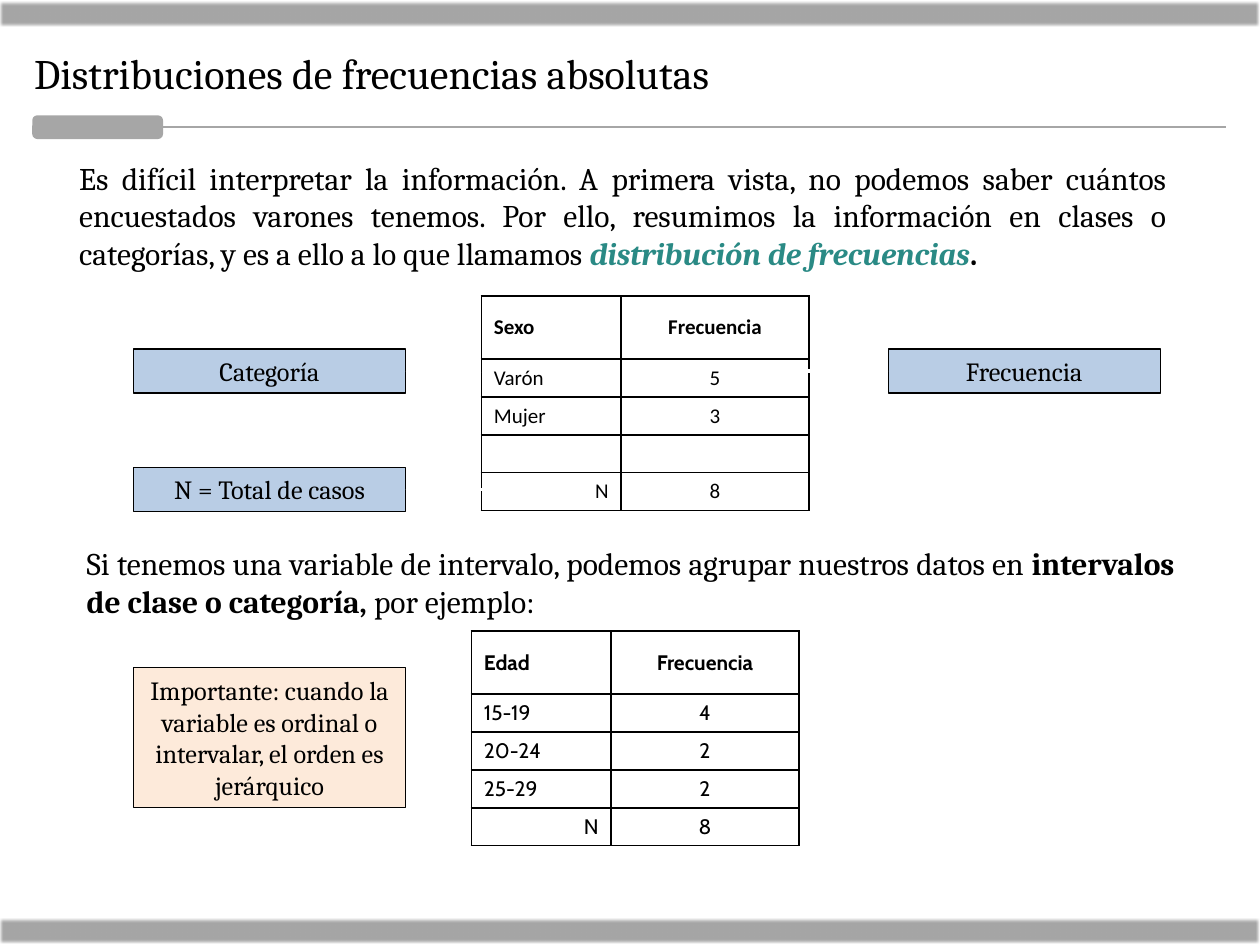
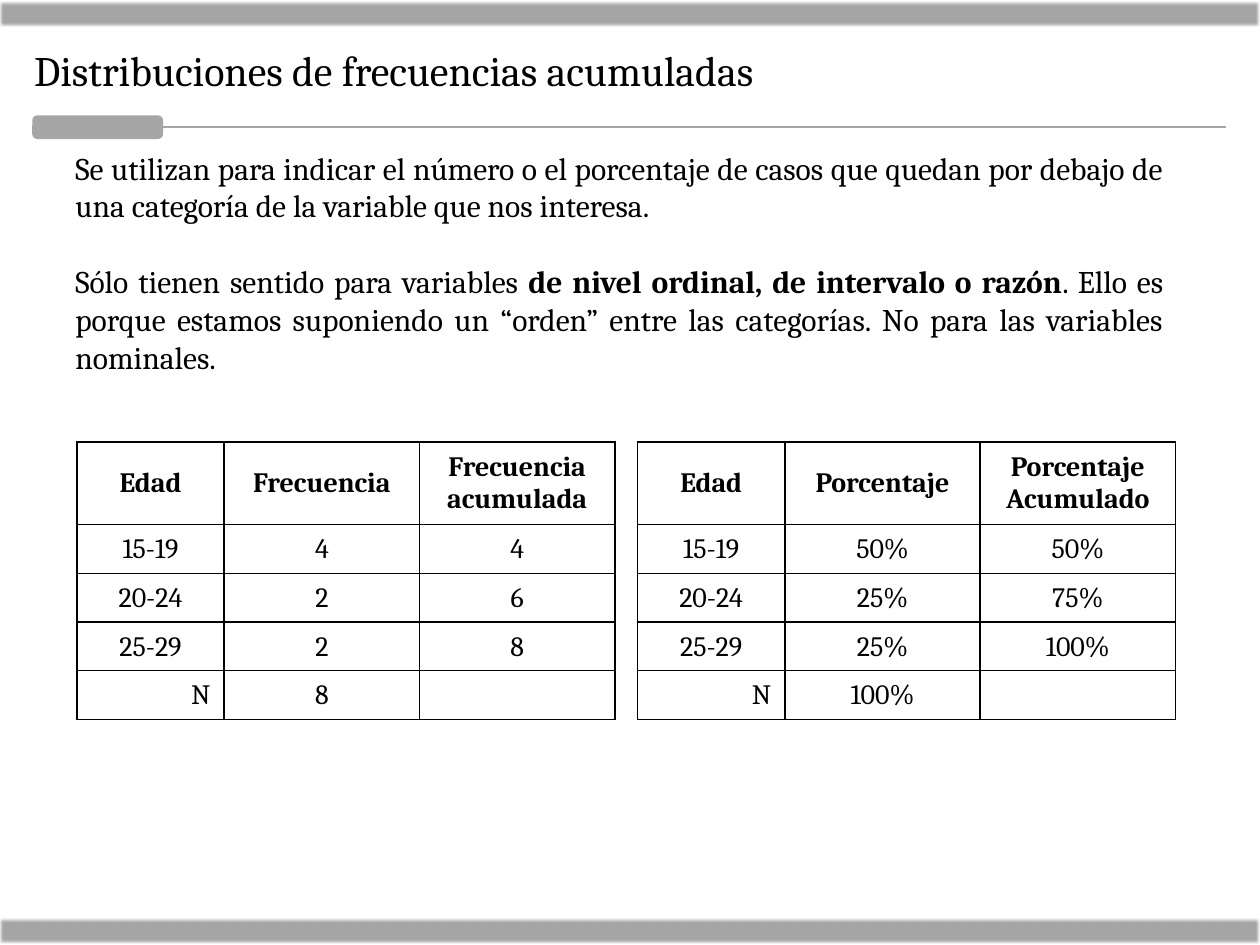
from lxml.etree import SubElement
from pptx import Presentation
from pptx.dml.color import RGBColor
from pptx.enum.shapes import MSO_CONNECTOR, MSO_SHAPE
from pptx.enum.text import MSO_ANCHOR, MSO_AUTO_SIZE, PP_ALIGN
from pptx.oxml.ns import qn
from pptx.util import Inches, Pt

INK = {"black": "000000", "white": "FFFFFF", "gray": "A6A6A6",
       "blue": "B9CDE5", "peach": "FDEADA", "teal": "2A8A85"}
SERIF = "Cambria"
LEFT, MID, RIGHT, FULL = (PP_ALIGN.LEFT, PP_ALIGN.CENTER,
                          PP_ALIGN.RIGHT, PP_ALIGN.JUSTIFY)
BOLD = {"bold": True}


def rgb(name):
    return RGBColor.from_string(INK[name])


def write(frame, *paras, size=18, font=SERIF, color="black", bold=False,
          align=LEFT, before=0, gap=0):
    """Each paragraph is a string or a list of (text, format) runs."""
    frame.word_wrap = True
    for i, runs in enumerate(paras):
        para = frame.add_paragraph() if i else frame.paragraphs[0]
        para.alignment = align
        para.space_before = Pt(gap if i else before)
        for text, style in [(runs, {})] if isinstance(runs, str) else runs:
            if not text:
                SubElement(para._p, qn("a:endParaRPr"), sz=str(size * 100))
                continue
            run = para.add_run()
            run.text = text
            face = run.font
            face.name, face.size = font, Pt(size)
            face.bold = style.get("bold", bold)
            face.italic = style.get("italic", False)
            face.color.rgb = rgb(style.get("color", color))


def prose(slide, box, *paras, **style):
    frame = slide.shapes.add_textbox(*map(Inches, box)).text_frame
    write(frame, *paras, align=FULL, **style)
    frame.auto_size = MSO_AUTO_SIZE.SHAPE_TO_FIT_TEXT


def block(slide, box, fill, kind=MSO_SHAPE.RECTANGLE, line=None, width=0.75):
    shape = slide.shapes.add_shape(kind, *map(Inches, box))
    shape.shadow.inherit = False
    shape.fill.solid()
    shape.fill.fore_color.rgb = rgb(fill)
    if line:
        shape.line.color.rgb = rgb(line)
        shape.line.width = Pt(width)
    else:
        shape.line.fill.background()
    return shape


def label(slide, box, text, fill="blue"):
    shape = block(slide, box, fill, line="black")
    frame = shape.text_frame
    write(frame, text, size=15, align=MID, before=3)
    frame.vertical_anchor = MSO_ANCHOR.MIDDLE
    frame.auto_size = MSO_AUTO_SIZE.SHAPE_TO_FIT_TEXT
    return shape


def rule(slide, start, end, color, width):
    line = slide.shapes.add_connector(MSO_CONNECTOR.STRAIGHT,
                                      *map(Inches, start + end))
    line.line.color.rgb = rgb(color)
    line.line.width = Pt(width)
    SubElement(line._element.spPr, qn("a:effectLst"))
    return line


def arrow(slide, left, box, side):
    """Runs level from the given x to a side of the box."""
    mid = (box.top + box.height / 2) / Inches(1)
    line = rule(slide, (left, mid), (left, mid), "white", 2.25)
    line.end_connect(box, side)
    SubElement(line.line._get_or_add_ln(), qn("a:tailEnd"), type="arrow")


def border(cell):
    props = cell._tc.get_or_add_tcPr()
    for side in "LRTB":
        line = SubElement(props, qn("a:ln" + side), w=str(Pt(1)))
        fill = SubElement(line, qn("a:solidFill"))
        SubElement(fill, qn("a:srgbClr"), val=INK["black"])


def grid(slide, spot, cols, rows, data, pad, first=LEFT, **style):
    """Frequency table: bold head, first column aligned, total N at right."""
    size = (sum(cols), sum(rows))
    table = slide.shapes.add_table(len(rows), len(cols),
                                   *map(Inches, spot + size)).table
    table.first_row = table.horz_banding = False
    for col, width in zip(table.columns, cols):
        col.width = Inches(width)
    for r, (row, high) in enumerate(zip(data, rows)):
        table.rows[r].height = Inches(high)
        for c, text in enumerate(row):
            cell = table.cell(r, c)
            border(cell)
            cell.fill.background()
            cell.margin_left = cell.margin_right = Inches(pad[0])
            cell.margin_top = cell.margin_bottom = Inches(pad[1])
            cell.vertical_anchor = MSO_ANCHOR.BOTTOM if r else MSO_ANCHOR.MIDDLE
            align = MID if c else RIGHT if text == "N" else first
            write(cell.text_frame, text, bold=r == 0, align=align, **style)


def start(deck, title, top):
    """Adds a slide with its title, bands and title rule."""
    slide = deck.slides.add_slide(deck.slide_layouts[5])
    head = slide.shapes.title
    head.left, head.top, head.width, head.height = map(
        Inches, (0.17, top, 9.56, 0.5))
    write(head.text_frame, title, size=24)
    head.text_frame.vertical_anchor = MSO_ANCHOR.TOP
    head.text_frame.auto_size = MSO_AUTO_SIZE.SHAPE_TO_FIT_TEXT
    for y in (0.01, 7.29):
        band = block(slide, (0, y, 10, 0.2), "gray")
        effect = band._element.spPr.find(qn("a:effectLst"))
        SubElement(effect, qn("a:softEdge"), rad=str(Pt(1)))
    block(slide, (0.27, 0.93, 1.01, 0.16), "gray",
          MSO_SHAPE.ROUNDED_RECTANGLE, "gray", 2)
    rule(slide, (1.23, 1.01), (9.73, 1.01), "gray", 1.25)
    return slide


def simple(deck):
    slide = start(deck, "Distribuciones de frecuencias absolutas", 0.33)
    prose(slide, (0.53, 1.21, 8.83, 1.01), [
        ("Es difícil interpretar la información. A primera vista, no podemos "
         "saber cuántos encuestados varones tenemos. Por ello, resumimos la "
         "información en clases o categorías, y es a ello a lo que llamamos ", {}),
        ("distribución de frecuencias",
         {"bold": True, "italic": True, "color": "teal"}),
        (".", BOLD)])
    prose(slide, (0.59, 4.27, 8.83, 0.71), [
        ("Si tenemos una variable de intervalo, podemos agrupar nuestros "
         "datos en ", {}),
        ("intervalos de clase o categoría, ", BOLD),
        ("por ejemplo:", {})])

    sexes = [("Sexo", "Frecuencia"), ("Varón", "5"), ("Mujer", "3"),
             ("", ""), ("N", "8")]
    ages = [("Edad", "Frecuencia"), ("15-19", "4"), ("20-24", "2"),
            ("25-29", "2"), ("N", "8")]
    for spot, data, font in (((3.82, 2.35), sexes, "Calibri"),
                             ((3.74, 5.01), ages, "Cabin")):
        grid(slide, spot, (1.11, 1.49), (0.5,) + (0.3,) * 4, data,
             (0.1, 0.05), size=12, font=font)

    for x, y, text, tip, side in (
            (1.06, 2.77, "Categoría", 3.82, 3),
            (7.05, 2.77, "Frecuencia", 5.87, 1),
            (1.06, 3.71, "N = Total de casos", 4.61, 3)):
        arrow(slide, tip, label(slide, (x, y, 2.16, 0.35), text), side)
    label(slide, (1.06, 5.3, 2.16, 1.11),
          "Importante: cuando la variable es ordinal o intervalar, "
          "el orden es jerárquico", "peach")


def summed(deck):
    slide = start(deck, "Distribuciones de frecuencias acumuladas", 0.3)
    prose(slide, (0.5, 1.13, 8.83, 1.92),
          "Se utilizan para indicar el número o el porcentaje de casos que "
          "quedan por debajo de una categoría de la variable que nos interesa.",
          [("Sólo tienen sentido para variables ", {}),
           ("de nivel ordinal, de intervalo o razón", BOLD),
           (". Ello es porque estamos suponiendo un “orden” entre las "
            "categorías. No para las variables nominales.", {})],
          gap=21.7)
    counts = [("Edad", "Frecuencia", "Frecuencia acumulada"),
              ("15-19", "4", "4"), ("20-24", "2", "6"),
              ("25-29", "2", "8"), ("N", "8", "")]
    shares = [("Edad", "Porcentaje", "Porcentaje Acumulado"),
              ("15-19", "50%", "50%"), ("20-24", "25%", "75%"),
              ("25-29", "25%", "100%"), ("N", "100%", "")]
    for x, data in ((0.61, counts), (5.06, shares)):
        grid(slide, (x, 3.51), (1.17, 1.55, 1.55), (0.65,) + (0.38,) * 4,
             data, (0.11, 0.06), first=MID, size=16)


def main():
    deck = Presentation()
    deck.slide_width, deck.slide_height = Inches(10), Inches(7.5)
    simple(deck)
    summed(deck)
    deck.save("out.pptx")


if __name__ == "__main__":
    main()
